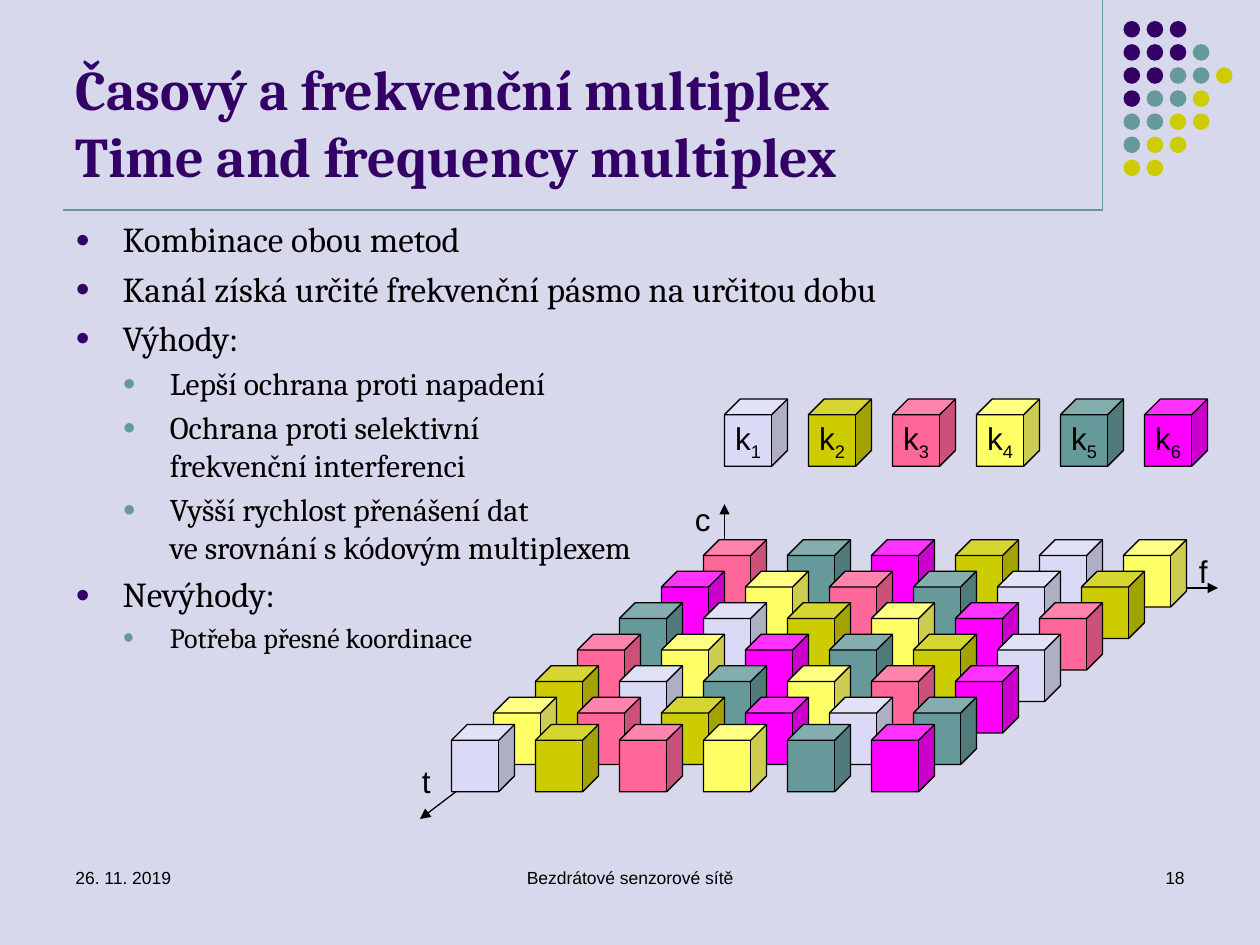
import copy
from dataclasses import dataclass

import pptx
import pptx.dml.color
import pptx.enum.shapes
import pptx.enum.text
import pptx.oxml
import pptx.oxml.ns
import pptx.util

Pt = pptx.util.Pt
Shape = pptx.enum.shapes.MSO_SHAPE
Align = pptx.enum.text.PP_ALIGN
Anchor = pptx.enum.text.MSO_ANCHOR


@dataclass(frozen=True)
class Theme:
    background: str = "D8D8EC"
    ink: str = "000000"
    purple: str = "330066"
    teal: str = "669999"
    olive: str = "CCCC00"
    channels: tuple = ("DADAF6", "CCCC00", "FF6699", "FFFF66", "669999", "FF00FF")
    serif: str = "Cambria"
    sans: str = "Arial"
    title_size: int = 32
    body_size: int = 20
    sub_size: int = 18
    detail_size: int = 16
    label_size: int = 18
    footer_size: int = 10
    line_width: float = 0.75


def rgb(color):
    return pptx.dml.color.RGBColor.from_string(color)


def apply(target, values):
    for name, value in values.items():
        setattr(target, name, value)


def append_xml(parent, tag, **attributes):
    child = pptx.oxml.parse_xml(f"<a:{tag} {pptx.oxml.ns.nsdecls('a')}/>")
    for name, value in attributes.items():
        child.set(name, str(value))
    parent.append(child)
    return child


class SlideBuilder:
    def __init__(self, slide, theme):
        self.slide = slide
        self.theme = theme
        slide.background.fill.solid()
        slide.background.fill.fore_color.rgb = rgb(theme.background)

    def add_text(self, para, text, size, font, color=None, bold=False):
        """Add text to a paragraph; each newline becomes a line break of the same size."""
        for number, line in enumerate(text.split("\n")):
            if number:
                para.add_line_break()
                para._p[-1].append(copy.deepcopy(span._r.rPr))
            span = para.add_run()
            span.text = line
            apply(span.font, {"size": Pt(size), "name": font, "bold": bold})
            span.font.color.rgb = rgb(color or self.theme.ink)
        return span

    def title(self, text, left, top, width, height):
        box = self.slide.shapes.title
        apply(box, {"left": Pt(left), "top": Pt(top), "width": Pt(width), "height": Pt(height)})
        apply(box.text_frame, {"vertical_anchor": Anchor.BOTTOM, "word_wrap": True,
                               "auto_size": pptx.enum.text.MSO_AUTO_SIZE.NONE})
        para = box.text_frame.paragraphs[0]
        para.alignment = Align.LEFT
        self.add_text(para, text, self.theme.title_size, self.theme.serif,
                      self.theme.purple, True)

    def frame(self, left, top, width, height, wrap=True):
        box = self.slide.shapes.add_textbox(Pt(left), Pt(top), Pt(width), Pt(height))
        box.text_frame.word_wrap = wrap
        return box.text_frame

    def label(self, text, left, top, width, height, size, align=Align.LEFT, wrap=True):
        para = self.frame(left, top, width, height, wrap).paragraphs[0]
        para.alignment = align
        self.add_text(para, text, size, self.theme.sans)

    def bullets(self, items, left, top, width, height):
        frame = self.frame(left, top, width, height)
        indent = Pt(27)
        for number, (level, text, size) in enumerate(items):
            para = frame.add_paragraph() if number else frame.paragraphs[0]
            apply(para, {"level": level, "space_before": Pt(size * 0.2)})
            properties = para._p.get_or_add_pPr()
            properties.set("marL", str(indent * (level + 1)))
            properties.set("indent", str(-indent))
            color = append_xml(properties, "buClr")
            append_xml(color, "srgbClr", val=(self.theme.purple, self.theme.teal)[level])
            append_xml(properties, "buSzPct", val=70000)
            append_xml(properties, "buFont", typeface=self.theme.sans)
            append_xml(properties, "buChar", char="●")
            self.add_text(para, text, size, self.theme.serif)

    def line(self, start, end, color, arrow=False):
        connector = self.slide.shapes.add_connector(
            pptx.enum.shapes.MSO_CONNECTOR.STRAIGHT, *(Pt(value) for value in (*start, *end)))
        connector.line.color.rgb = rgb(color)
        connector.line.width = Pt(self.theme.line_width)
        if arrow:
            append_xml(connector.line._get_or_add_ln(), "tailEnd", type="triangle")
        append_xml(connector._element.spPr, "effectLst")

    def shape(self, kind, left, top, width, height, fill):
        shape = self.slide.shapes.add_shape(kind, Pt(left), Pt(top), Pt(width), Pt(height))
        shape.shadow.inherit = False
        shape.fill.solid()
        shape.fill.fore_color.rgb = rgb(fill)
        return shape

    def dot(self, left, top, fill):
        self.shape(Shape.OVAL, left, top, 9.5, 9.5, fill).line.fill.background()

    def cube(self, channel, left, top, labelled=False):
        cube = self.shape(Shape.CUBE, left, top, 36, 38.4, self.theme.channels[channel - 1])
        cube.adjustments[0] = 0.25
        cube.line.color.rgb = rgb(self.theme.ink)
        cube.line.width = Pt(self.theme.line_width)
        if labelled:
            apply(cube.text_frame, {"word_wrap": False, "vertical_anchor": Anchor.MIDDLE})
            para = cube.text_frame.paragraphs[0]
            para.alignment = Align.CENTER
            style = (self.theme.label_size, self.theme.sans)
            self.add_text(para, "k", *style)
            index = self.add_text(para, str(channel), *style)
            index.font._element.set("baseline", "-25000")


def main():
    theme = Theme()
    deck = pptx.Presentation()
    apply(deck, {"slide_width": Pt(720), "slide_height": Pt(540)})
    page = SlideBuilder(deck.slides.add_slide(deck.slide_layouts[5]), theme)

    page.line((630, 0), (630, 120), theme.teal)
    page.line((36, 120), (630, 120), theme.teal)
    dot_colors = {"P": theme.purple, "T": theme.teal, "O": theme.olive}
    for row, dots in enumerate(("PPP", "PPPT", "PPTTO", "PTTO", "TTOO", "TOO", "OO")):
        for column, dot in enumerate(dots):
            page.dot(642 + 13.2 * column, 12 + 13.2 * row, dot_colors[dot])

    page.title("Časový a frekvenční multiplex\nTime and frequency multiplex", 36, 9.5, 594, 102)
    page.bullets((
        (0, "Kombinace obou metod", theme.body_size),
        (0, "Kanál získá určité frekvenční pásmo na určitou dobu", theme.body_size),
        (0, "Výhody:", theme.body_size),
        (1, "Lepší ochrana proti napadení", theme.sub_size),
        (1, "Ochrana proti selektivní\nfrekvenční interferenci", theme.sub_size),
        (1, "Vyšší rychlost přenášení dat\nve srovnání s kódovým multiplexem", theme.sub_size),
        (0, "Nevýhody:", theme.body_size),
        (1, "Potřeba přesné koordinace", theme.detail_size),
    ), 36, 121, 648, 347)

    origin = (414, 336)
    for name, tip, left, top in (("f", (696, 336), 678, 312),
                                 ("t", (240, 468), 234, 432),
                                 ("c", (414, 288), 390, 282)):
        page.line(origin, tip, theme.ink, arrow=True)
        page.label(name, left, top, 20, 26.6, theme.label_size, wrap=False)

    column_step = 48
    time_slots = ((3, 5, 6, 2, 1, 4), (6, 4, 3, 5, 1, 2), (5, 1, 2, 4, 6, 3),
                  (3, 4, 6, 5, 2, 1), (2, 1, 5, 4, 3, 6), (4, 3, 2, 6, 1, 5),
                  (1, 2, 3, 4, 5, 6))
    for row, slot in enumerate(time_slots):
        top = min(308.4 + 18 * row, 414)
        for column, channel in enumerate(slot):
            page.cube(channel, 402 - 24 * row + column_step * column, top)
    for channel in range(1, 7):
        page.cube(channel, 414 + column_step * (channel - 1), 228, labelled=True)

    for text, left, width, align in (("26. 11. 2019", 36, 168, Align.LEFT),
                                     ("Bezdrátové senzorové sítě", 246, 228, Align.CENTER),
                                     ("18", 516, 168, Align.RIGHT)):
        page.label(text, left, 492, width, 36, theme.footer_size, align)

    deck.save("out.pptx")


if __name__ == "__main__":
    main()
